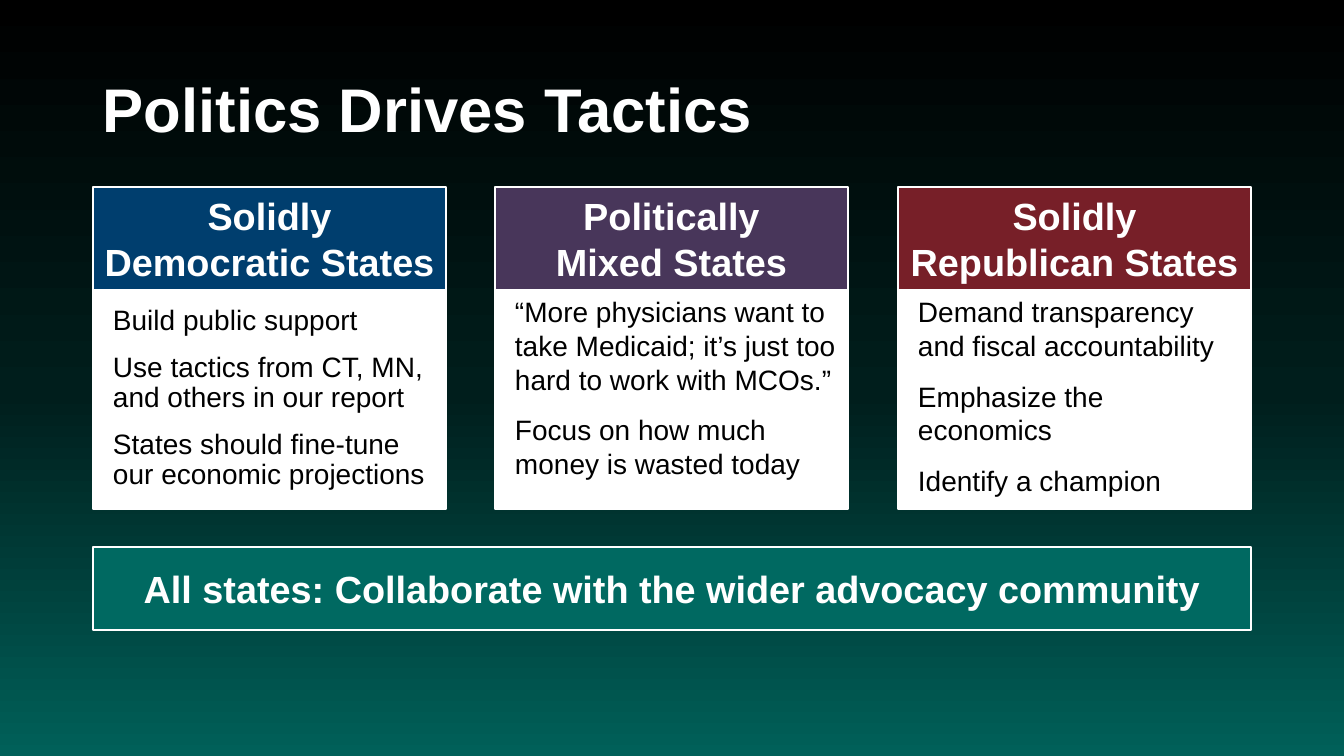
from copy import deepcopy
from dataclasses import dataclass

from pptx import Presentation
from pptx.dml.color import RGBColor as Rgb
from pptx.enum.shapes import MSO_SHAPE as Shape
from pptx.enum.text import MSO_ANCHOR as Anchor, PP_ALIGN as Align
from pptx.util import Pt

EMU_PER_PX = 914400 / 100.8


def px(length):
    return round(length * EMU_PER_PX)


@dataclass(frozen=True)
class Theme:
    font: str = "Arial"
    white: str = "FFFFFF"
    black: str = "000000"
    blue: str = "003E6E"
    purple: str = "48365A"
    red: str = "771F28"
    teal: str = "006961"
    backdrop: tuple = ((0, "000000"), (0.52, "001E1C"), (1, "006059"))
    title: int = 44
    heading: int = 27
    body: int = 20


class SlideBuilder:
    """Draws styled elements on the current slide."""

    def __init__(self, page, theme):
        self.page = page
        self.theme = theme

    def background(self):
        fill = self.page.background.fill
        fill.gradient()
        fill.gradient_angle = 270
        stops = self.page.element.xpath(".//a:gsLst")[0]
        stops.append(deepcopy(stops[0]))
        for stop, (position, color) in zip(fill.gradient_stops, self.theme.backdrop):
            stop.position = position
            stop.color.rgb = Rgb.from_string(color)

    def set_text(self, box, lines, size, color, bold=False, align=Align.LEFT,
                 anchor=Anchor.MIDDLE, insets=(10, 5, 10, 5), spacing=1.0, after=0):
        frame = box.text_frame
        frame.word_wrap = True
        frame.vertical_anchor = anchor
        (frame.margin_left, frame.margin_top,
         frame.margin_right, frame.margin_bottom) = map(px, insets)
        for index, line in enumerate(lines):
            para = frame.add_paragraph() if index else frame.paragraphs[0]
            para.text = line
            para.alignment = align
            para.line_spacing = spacing
            para.space_after = Pt(after)
            para.font.name = self.theme.font
            para.font.size = Pt(size)
            para.font.bold = bold
            para.font.color.rgb = Rgb.from_string(color)

    def title(self, text, *place):
        box = self.page.shapes.add_textbox(*map(px, place))
        self.set_text(box, [text], self.theme.title, self.theme.white, bold=True, spacing=0.9)

    def panel(self, place, color):
        box = self.page.shapes.add_shape(Shape.RECTANGLE, *map(px, place))
        box.shadow.inherit = False
        box.fill.solid()
        box.fill.fore_color.rgb = Rgb.from_string(color)
        box.line.color.rgb = Rgb.from_string(self.theme.white)
        box.line.width = Pt(1)
        return box

    def heading(self, lines, color, *place):
        self.set_text(self.panel(place, color), lines, self.theme.heading, self.theme.white,
                      bold=True, align=Align.CENTER)

    def body(self, lines, insets, spacing, *place):
        self.set_text(self.panel(place, self.theme.white), lines, self.theme.body,
                      self.theme.black, anchor=Anchor.TOP, insets=insets,
                      spacing=spacing, after=12)


def main():
    deck = Presentation()
    deck.slide_width, deck.slide_height = px(1344), px(756)
    theme = Theme()
    builder = SlideBuilder(deck.slides.add_slide(deck.slide_layouts[6]), theme)
    builder.background()
    left, total_width, column_width = 93, 1158, 353
    builder.title("Politics Drives Tactics", left, 40, total_width, 146)

    roomy, compact = (20, 16, 21, 24), (20, 5, 10, 5)
    columns = [
        (["Solidly Democratic States"], theme.blue, roomy, 0.9,
         ["Build public support",
          "Use tactics from CT, MN, and others in our report",
          "States should fine-tune our economic projections"]),
        (["Politically", "Mixed States"], theme.purple, compact, 1.0,
         ["“More physicians want to take Medicaid; it’s just too hard to work with MCOs.”",
          "Focus on how much money is wasted today"]),
        (["Solidly Republican States"], theme.red, compact, 1.0,
         ["Demand transparency and fiscal accountability",
          "Emphasize the economics",
          "Identify a champion"]),
    ]
    travel = total_width - column_width
    for index, (heading, color, insets, spacing, points) in enumerate(columns):
        x = left + travel * index // (len(columns) - 1)
        builder.heading(heading, color, x, 187, column_width, 103)
        builder.body(points, insets, spacing, x, 290, column_width, 219)

    builder.heading(["All states: Collaborate with the wider advocacy community"],
                    theme.teal, left, 547, total_width, 83)
    deck.save("out.pptx")


if __name__ == "__main__":
    main()
